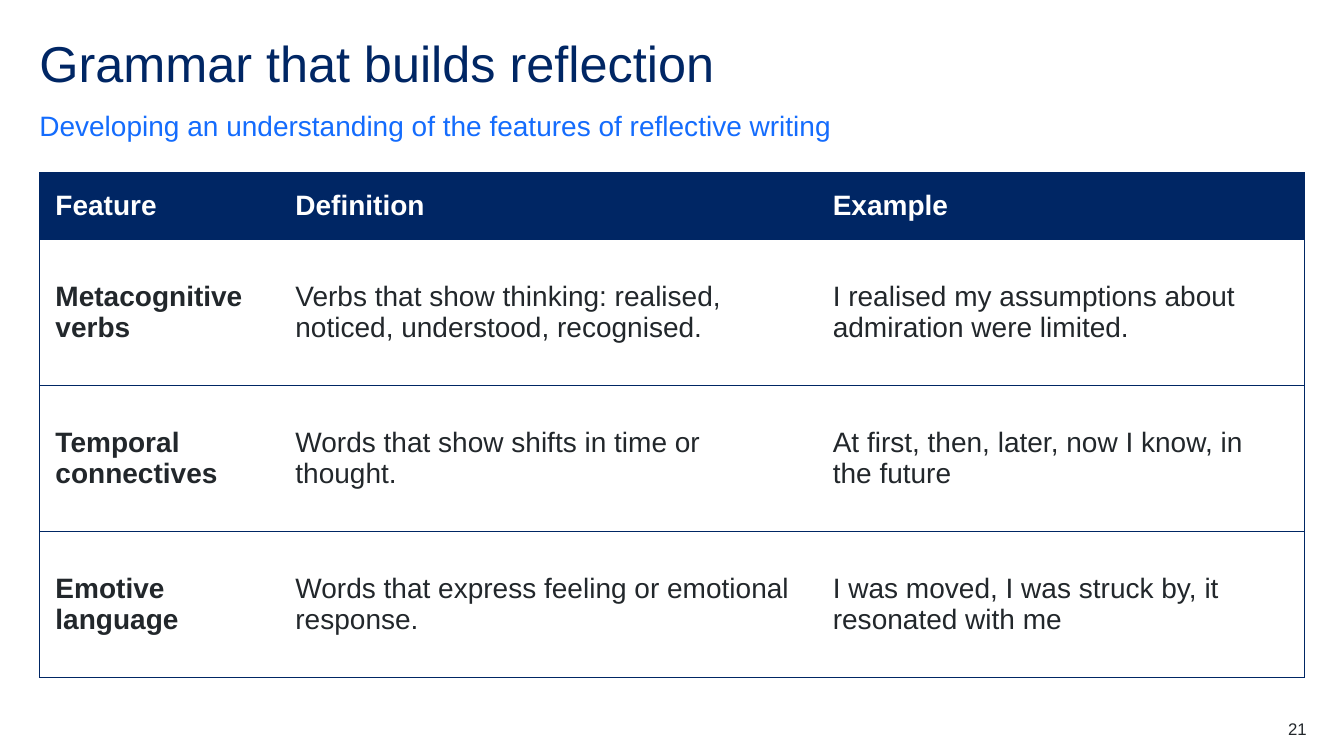
from dataclasses import dataclass

from lxml import etree
from pptx import Presentation
from pptx.dml.color import RGBColor
from pptx.enum.text import MSO_ANCHOR, MSO_AUTO_SIZE, PP_ALIGN
from pptx.oxml.ns import qn
from pptx.slide import Slide
from pptx.table import _Cell
from pptx.text.text import TextFrame
from pptx.util import Pt

TOP, MIDDLE, BOTTOM = MSO_ANCHOR.TOP, MSO_ANCHOR.MIDDLE, MSO_ANCHOR.BOTTOM
LEFT, RIGHT = PP_ALIGN.LEFT, PP_ALIGN.RIGHT
NO_AUTOFIT = MSO_AUTO_SIZE.NONE

EMU_PER_PX = 9144  # 100 px to the inch
FONT = "Arial"
TITLE_ONLY = 5
COLORS = {
    "navy": "002664",
    "blue": "146CFD",
    "white": "FFFFFF",
    "ink": "22272B",
}

# Table content and grid
COLUMN_WIDTHS = (238, 533, 484)
HEADER_HEIGHT, ROW_HEIGHT = 66, 145
TABLE_LEFT, TABLE_TOP = 39, 171
BORDER_WIDTH = Pt(0.5)
CELL_MARGINS = {"margin_left": 16, "margin_top": 0,
                "margin_right": 24, "margin_bottom": 0}
FEATURE_ROWS = (
    ("Feature", "Definition", "Example"),
    ("Metacognitive verbs",
     "Verbs that show thinking: realised, noticed, understood, recognised.",
     "I realised my assumptions about admiration were limited."),
    ("Temporal connectives",
     "Words that show shifts in time or thought.",
     "At first, then, later, now I know, in the future"),
    ("Emotive language",
     "Words that express feeling or emotional response.",
     "I was moved, I was struck by, it resonated with me"),
)


@dataclass(frozen=True)
class TextStyle:
    size: int
    color: str
    bold: bool = False
    align: PP_ALIGN = LEFT
    line_spacing: float = 1.0
    space_after: int = 0


@dataclass(frozen=True)
class TextBlock:
    text: str
    box: tuple[int, int, int, int]
    style: TextStyle
    anchor: MSO_ANCHOR = TOP
    is_title: bool = False


TEXT_BLOCKS = (
    TextBlock("Grammar that builds reflection", (39, 39, 1256, 60),
              TextStyle(36, "navy", line_spacing=0.9), is_title=True),
    TextBlock("Developing an understanding of the features of reflective writing",
              (39, 107, 1256, 34),
              TextStyle(20, "blue", line_spacing=1.5, space_after=12), BOTTOM),
    TextBlock("21", (1217, 713, 79, 20), TextStyle(12, "ink", align=RIGHT)),
)


def px(length: int) -> int:
    return length * EMU_PER_PX


def rgb(name: str) -> RGBColor:
    return RGBColor.from_string(COLORS[name])


def write_text(frame: TextFrame, text: str, style: TextStyle) -> None:
    paragraph = frame.paragraphs[0]
    paragraph.alignment = style.align
    paragraph.line_spacing = style.line_spacing
    paragraph.space_after = Pt(style.space_after)
    run = paragraph.add_run()
    run.text = text
    font_format = {"name": FONT, "size": Pt(style.size), "bold": style.bold}
    for attribute, value in font_format.items():
        setattr(run.font, attribute, value)
    run.font.color.rgb = rgb(style.color)


def add_text_block(slide: Slide, block: TextBlock) -> None:
    box = [px(length) for length in block.box]
    if block.is_title:
        holder = slide.shapes.title
        holder.left, holder.top, holder.width, holder.height = box
    else:
        holder = slide.shapes.add_textbox(*box)
    frame = holder.text_frame
    frame_format = {"margin_left": 0, "margin_top": 0, "margin_right": 0,
                    "margin_bottom": 0, "word_wrap": True,
                    "auto_size": NO_AUTOFIT, "vertical_anchor": block.anchor}
    for attribute, value in frame_format.items():
        setattr(frame, attribute, value)
    write_text(frame, block.text, block.style)


def set_borders(cell: _Cell, visible: dict[str, bool]) -> None:
    properties = cell._tc.get_or_add_tcPr()
    for side, shown in visible.items():
        line = etree.SubElement(properties, qn(f"a:ln{side}"), w=str(BORDER_WIDTH))
        if shown:
            fill = etree.SubElement(line, qn("a:solidFill"))
            etree.SubElement(fill, qn("a:srgbClr"), val=COLORS["navy"])
        else:
            etree.SubElement(line, qn("a:noFill"))


def add_feature_table(slide: Slide) -> None:
    heights = [HEADER_HEIGHT] + [ROW_HEIGHT] * (len(FEATURE_ROWS) - 1)
    table = slide.shapes.add_table(
        len(heights), len(COLUMN_WIDTHS), px(TABLE_LEFT), px(TABLE_TOP),
        px(sum(COLUMN_WIDTHS)), px(sum(heights))).table
    table.horz_banding = False
    for column, width in zip(table.columns, COLUMN_WIDTHS):
        column.width = px(width)
    for row, height in zip(table.rows, heights):
        row.height = px(height)

    last_column = len(COLUMN_WIDTHS) - 1
    for r, texts in enumerate(FEATURE_ROWS):
        is_header = r == 0
        for c, text in enumerate(texts):
            cell = table.cell(r, c)
            for attribute, margin in CELL_MARGINS.items():
                setattr(cell, attribute, px(margin))
            cell.vertical_anchor = MIDDLE
            # Outer frame and row rules only, no inner column rules
            set_borders(cell, {"L": c == 0, "R": c == last_column,
                               "T": True, "B": True})
            cell.fill.solid()
            cell.fill.fore_color.rgb = rgb("navy" if is_header else "white")
            write_text(cell.text_frame, text,
                       TextStyle(20, "white" if is_header else "ink",
                                 bold=is_header or c == 0))


def main() -> None:
    presentation = Presentation()
    presentation.slide_width = px(1333)
    presentation.slide_height = px(750)
    slide = presentation.slides.add_slide(presentation.slide_layouts[TITLE_ONLY])

    # Heading, subheading and page number
    for block in TEXT_BLOCKS:
        add_text_block(slide, block)

    # Grammar features
    add_feature_table(slide)
    presentation.save("out.pptx")


if __name__ == "__main__":
    main()
